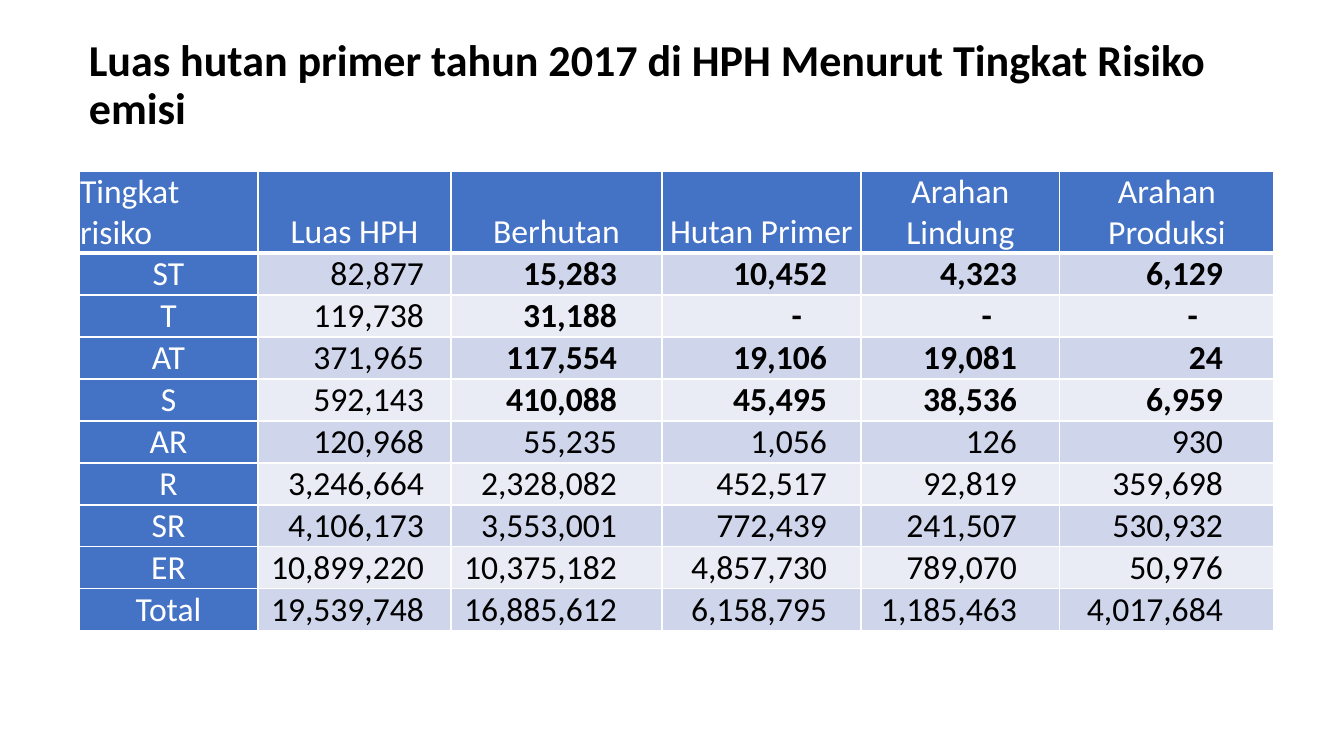
import pptx
import pptx.util
import pptx.dml.color
import pptx.enum.text
import pptx.oxml
import pptx.oxml.ns

ALIGN = pptx.enum.text.PP_ALIGN
ANCHOR = pptx.enum.text.MSO_ANCHOR


def px(n):
    return pptx.util.Emu(round(n * 914400 / 100.8))


def write(para, text, size, color, bold):
    run = para.add_run()
    run.text = text
    run.font.name = "Calibri"
    run.font.size = pptx.util.Pt(size)
    run.font.bold = bold
    run.font.color.rgb = pptx.dml.color.RGBColor.from_string(color)


deck = pptx.Presentation()
deck.slide_width = px(1344)
deck.slide_height = px(756)
slide = deck.slides.add_slide(deck.slide_layouts[6])

title = slide.shapes.add_textbox(px(79), px(31), px(1163), px(111)).text_frame
title.word_wrap = True
title.vertical_anchor = ANCHOR.MIDDLE
title.paragraphs[0].line_spacing = 0.9
write(title.paragraphs[0],
      "Luas hutan primer tahun 2017 di HPH Menurut Tingkat Risiko emisi",
      31.5, "000000", True)

rows = [
    ["Tingkat risiko", "Luas HPH", "Berhutan", "Hutan Primer", "Arahan Lindung", "Arahan Produksi"],
    ["ST", "82,877", "15,283", "10,452", "4,323", "6,129"],
    ["T", "119,738", "31,188", "-", "-", "-"],
    ["AT", "371,965", "117,554", "19,106", "19,081", "24"],
    ["S", "592,143", "410,088", "45,495", "38,536", "6,959"],
    ["AR", "120,968", "55,235", "1,056", "126", "930"],
    ["R", "3,246,664", "2,328,082", "452,517", "92,819", "359,698"],
    ["SR", "4,106,173", "3,553,001", "772,439", "241,507", "530,932"],
    ["ER", "10,899,220", "10,375,182", "4,857,730", "789,070", "50,976"],
    ["Total", "19,539,748", "16,885,612", "6,158,795", "1,185,463", "4,017,684"],
]
widths = [179, 193, 211, 199, 199, 214]
gaps = [1, 27, 45, 34, 43, 51]
heights = [82] + [42] * (len(rows) - 1)

table = slide.shapes.add_table(len(rows), len(widths), px(79), px(171),
                               px(sum(widths)), px(sum(heights))).table
for col, width in zip(table.columns, widths):
    col.width = px(width)

for r, row in enumerate(rows):
    table.rows[r].height = px(heights[r])
    for c, text in enumerate(row):
        cell = table.cell(r, c)
        head = r == 0 or c == 0
        cell.vertical_anchor = ANCHOR.BOTTOM
        cell.margin_left = cell.margin_top = px(1)
        cell.margin_bottom = 0
        para = cell.text_frame.paragraphs[0]
        if r == 0 and c == 0:
            para.alignment = ALIGN.LEFT
            cell.margin_right = px(20)
        elif head:
            para.alignment = ALIGN.CENTER
            cell.margin_right = px(1)
        else:
            para.alignment = ALIGN.RIGHT
            cell.margin_right = px(gaps[c] + (25 if text == "-" else 0))
        write(para, text, 24, "FFFFFF" if head else "000000",
              1 <= r <= 4 and c >= 2)

        props = cell._tc.get_or_add_tcPr()
        for side in "LRTB":
            thick = (r, side) in [(0, "B"), (1, "T")]
            line = pptx.util.Pt(3 if thick else 1)
            props.append(pptx.oxml.parse_xml(
                f'<a:ln{side} {pptx.oxml.ns.nsdecls("a")} w="{line}">'
                '<a:solidFill><a:srgbClr val="FFFFFF"/></a:solidFill>'
                f'</a:ln{side}>'))
        band = "CFD5EA" if r % 2 else "E9EBF5"
        cell.fill.solid()
        cell.fill.fore_color.rgb = pptx.dml.color.RGBColor.from_string(
            "4472C4" if head else band)

deck.save("out.pptx")
